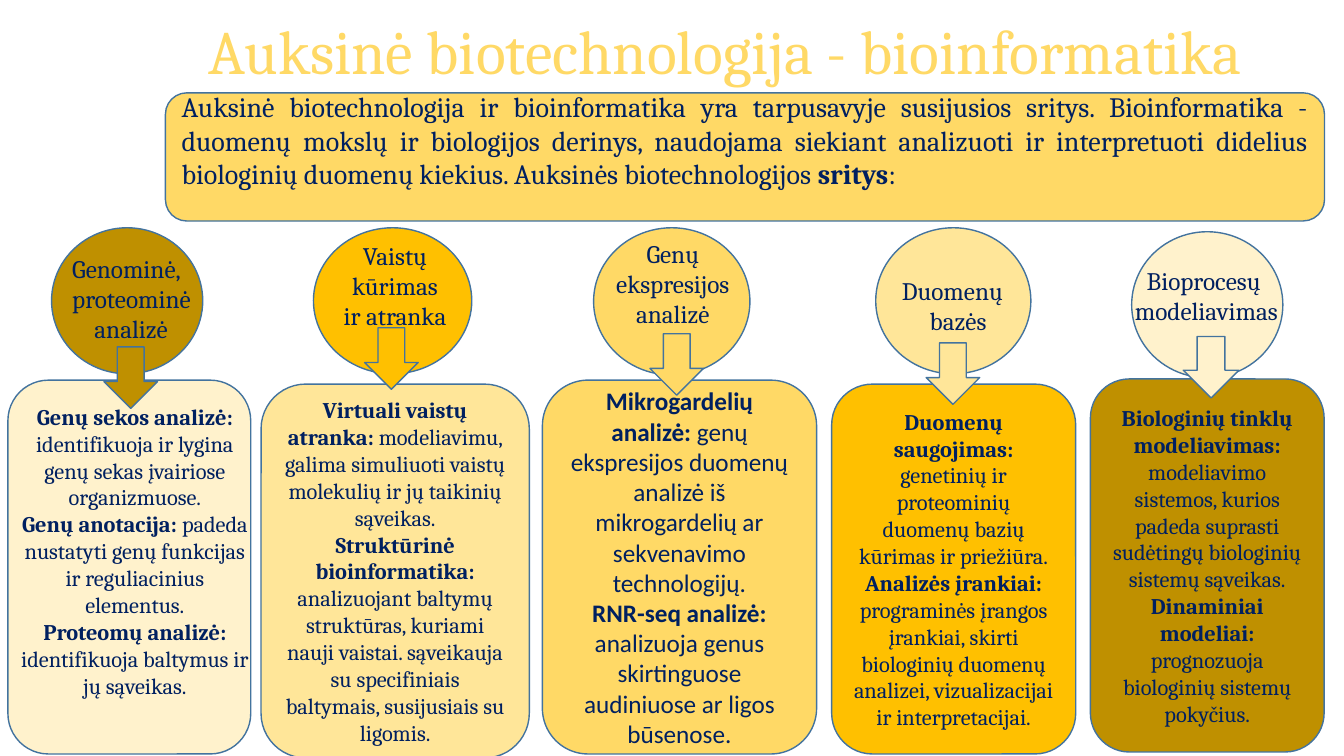
from pptx import Presentation
from pptx.dml.color import RGBColor
from pptx.enum.shapes import MSO_SHAPE as Shape
from pptx.enum.text import MSO_ANCHOR as Anchor, PP_ALIGN as Align
from pptx.util import Cm, Pt

NAVY, EDGE = "002060", "43739E"
BROWN, AMBER, GOLD, SAND, CREAM = "BF9000", "FFC000", "FFD966", "FFE699", "FFF2CC"


def color(code):
    return RGBColor.from_string(code)


class Deck:
    def __init__(self):
        self.prs = Presentation()
        self.prs.slide_width, self.prs.slide_height = Cm(33.87), Cm(19.05)
        self.slide = self.prs.slides.add_slide(self.prs.slide_layouts[6])

    def shape(self, kind, place, fill):
        item = self.slide.shapes.add_shape(kind, *map(Cm, place))
        item.shadow.inherit = False
        item.fill.solid()
        item.fill.fore_color.rgb = color(fill)
        item.line.color.rgb = color(EDGE)
        item.line.width = Pt(1)
        item.text_frame.vertical_anchor = Anchor.MIDDLE
        return item.text_frame

    def box(self, place, wrap=True):
        frame = self.slide.shapes.add_textbox(*map(Cm, place)).text_frame
        frame.word_wrap = wrap
        return frame

    def para(self, frame, runs, size, align=Align.CENTER, font="Cambria",
             ink=NAVY, indent=0):
        """Add one paragraph; runs are (text, bold) pairs."""
        first = frame.paragraphs[0]
        par = frame.add_paragraph() if first.runs else first
        par.alignment = align
        if indent:
            par._p.get_or_add_pPr().set("marL", str(Cm(indent)))
        for text, bold in runs:
            run = par.add_run()
            run.text = text
            run.font.size, run.font.name, run.font.bold = Pt(size), font, bold
            run.font.color.rgb = color(ink)

    def label(self, place, lines, align):
        frame = self.box(place, wrap=False)
        for text, indent in lines:
            self.para(frame, [(text, False)], 18, align, indent=indent)

    def body(self, frame, topics, size, font):
        for head, text in topics:
            self.para(frame, [(head + " ", True), (text, False)], size, font=font)


# Each column: circle, box, arrow and label places, fills, label lines, topics
COLUMNS = [
    dict(ring=(1.3, 5.74, 3.81, 3.68), card=(0.2, 9.58, 6.12, 9.42),
         arrow=(2.62, 8.74, 1.35, 1.55), label=(1.57, 6.25, 3.71, 2.57),
         fill=BROWN, back=CREAM, align=Align.LEFT, text=(0.15, 10.03, 6.5, 7.77),
         lines=[("Genominė,", 0), ("proteominė", 0), ("analizė", 0.56)],
         topics=[("Genų sekos analizė:", "identifikuoja ir lygina genų sekas įvairiose organizmuose."),
                 ("Genų anotacija:", "padeda nustatyti genų funkcijas ir reguliacinius elementus."),
                 ("Proteomų analizė:", "identifikuoja baltymus ir jų sąveikas.")]),
    dict(ring=(7.9, 5.74, 3.99, 3.68), card=(6.58, 9.68, 6.76, 9.42),
         arrow=(9.19, 8.26, 1.35, 1.55), label=(8.28, 5.92, 3.35, 2.57),
         fill=AMBER, back=SAND, align=Align.CENTER,
         lines=[("Vaistų", 0), ("kūrimas", 0), ("ir atranka", 0)],
         topics=[("Virtuali vaistų atranka:", "modeliavimu, galima simuliuoti vaistų molekulių ir jų taikinių sąveikas."),
                 ("Struktūrinė bioinformatika:", "analizuojant baltymų struktūras, kuriami nauji vaistai. "
                  "sąveikauja su specifiniais baltymais, susijusiais su ligomis.")]),
    dict(ring=(14.96, 5.74, 3.94, 3.71), card=(13.67, 9.58, 6.91, 9.42),
         arrow=(16.38, 8.41, 1.35, 1.55), label=(15.09, 5.87, 3.73, 2.57),
         fill=GOLD, back=GOLD, align=Align.CENTER, size=18, font="Calibri",
         lines=[("Genų", 0), ("ekspresijos", 0), ("analizė", 0)],
         topics=[("Mikrogardelių analizė:", "genų ekspresijos duomenų analizė iš mikrogardelių ar sekvenavimo technologijų."),
                 ("RNR-seq analizė:", "analizuoja genus skirtinguose audiniuose ar ligos būsenose.")]),
    dict(ring=(22.07, 5.74, 3.91, 3.68), card=(20.96, 9.68, 6.15, 9.32),
         arrow=(23.34, 8.64, 1.35, 1.55), label=(22.48, 6.81, 3.2, 1.8),
         fill=SAND, back=AMBER, align=Align.LEFT,
         lines=[("Duomenų", 0), ("bazės", 0.7)],
         topics=[("Duomenų saugojimas:", "genetinių ir proteominių duomenų bazių kūrimas ir priežiūra."),
                 ("Analizės įrankiai:", "programinės įrangos įrankiai, skirti biologinių duomenų "
                  "analizei, vizualizacijai ir interpretacijai.")]),
    dict(ring=(28.52, 5.84, 3.81, 3.68), card=(27.48, 9.55, 5.89, 9.4),
         arrow=(29.82, 8.48, 1.4, 1.55), label=(28.35, 6.55, 4.32, 1.8),
         fill=CREAM, back=BROWN, align=Align.LEFT,
         lines=[("Bioprocesų", 0.3), ("modeliavimas", 0)],
         topics=[("Biologinių tinklų modeliavimas:", "modeliavimo sistemos, kurios padeda suprasti "
                  "sudėtingų biologinių sistemų sąveikas."),
                 ("Dinaminiai modeliai:", "prognozuoja biologinių sistemų pokyčius.")]),
]


def main():
    deck = Deck()

    # Title
    title = deck.box((5, 0.18, 28.37, 2.16))
    title.vertical_anchor = Anchor.MIDDLE
    deck.para(title, [("Auksinė biotechnologija - bioinformatika", False)],
              44.1, Align.LEFT, ink=GOLD)

    # Introduction, kept high by a deep lower margin
    intro = deck.shape(Shape.ROUNDED_RECTANGLE, (4.17, 2.34, 29.21, 3.23), GOLD)
    intro.margin_bottom = Cm(0.97)
    deck.para(intro, [
        ("Auksinė biotechnologija ir bioinformatika yra tarpusavyje susijusios sritys. "
         "Bioinformatika - duomenų mokslų ir biologijos derinys, naudojama siekiant "
         "analizuoti ir interpretuoti didelius biologinių duomenų kiekius. "
         "Auksinės biotechnologijos ", False),
        ("sritys", True), (":", False)], 20, Align.JUSTIFY)

    # Five fields, each a circle with an arrow to its topics
    for col in COLUMNS:
        deck.shape(Shape.OVAL, col["ring"], col["fill"])
        frame = deck.shape(Shape.ROUNDED_RECTANGLE, col["card"], col["back"])
        deck.label(col["label"], col["lines"], col["align"])
        deck.shape(Shape.DOWN_ARROW, col["arrow"], col["fill"])
        if "text" in col:
            frame = deck.box(col["text"])
        deck.body(frame, col["topics"], col.get("size", 16), col.get("font", "Cambria"))

    deck.prs.save("out.pptx")


if __name__ == "__main__":
    main()
